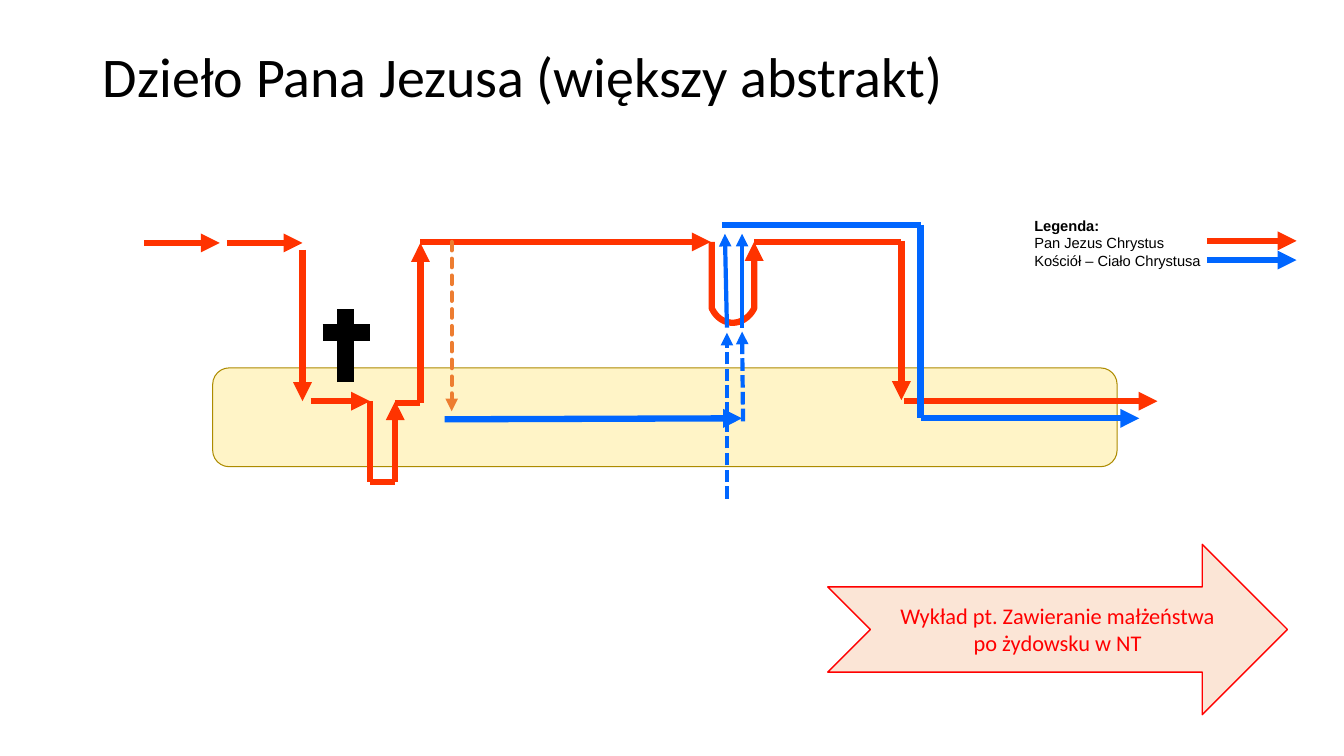
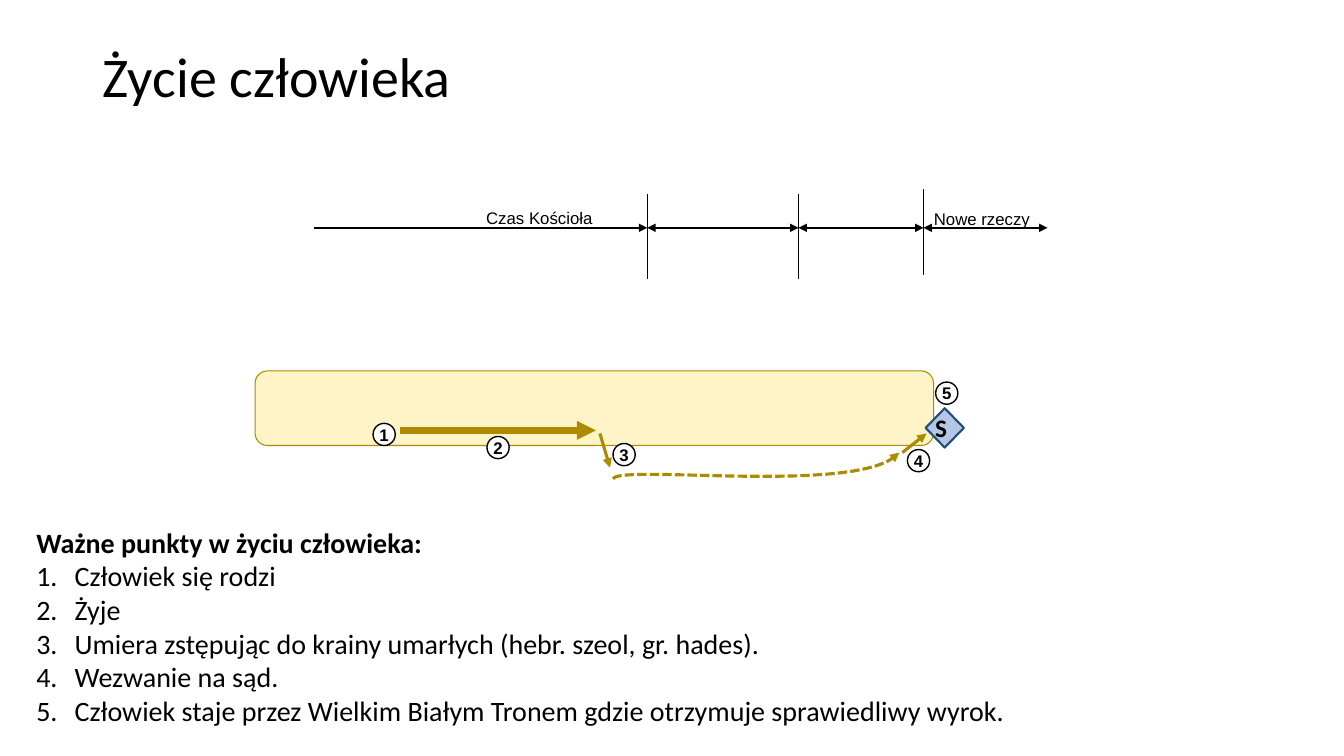
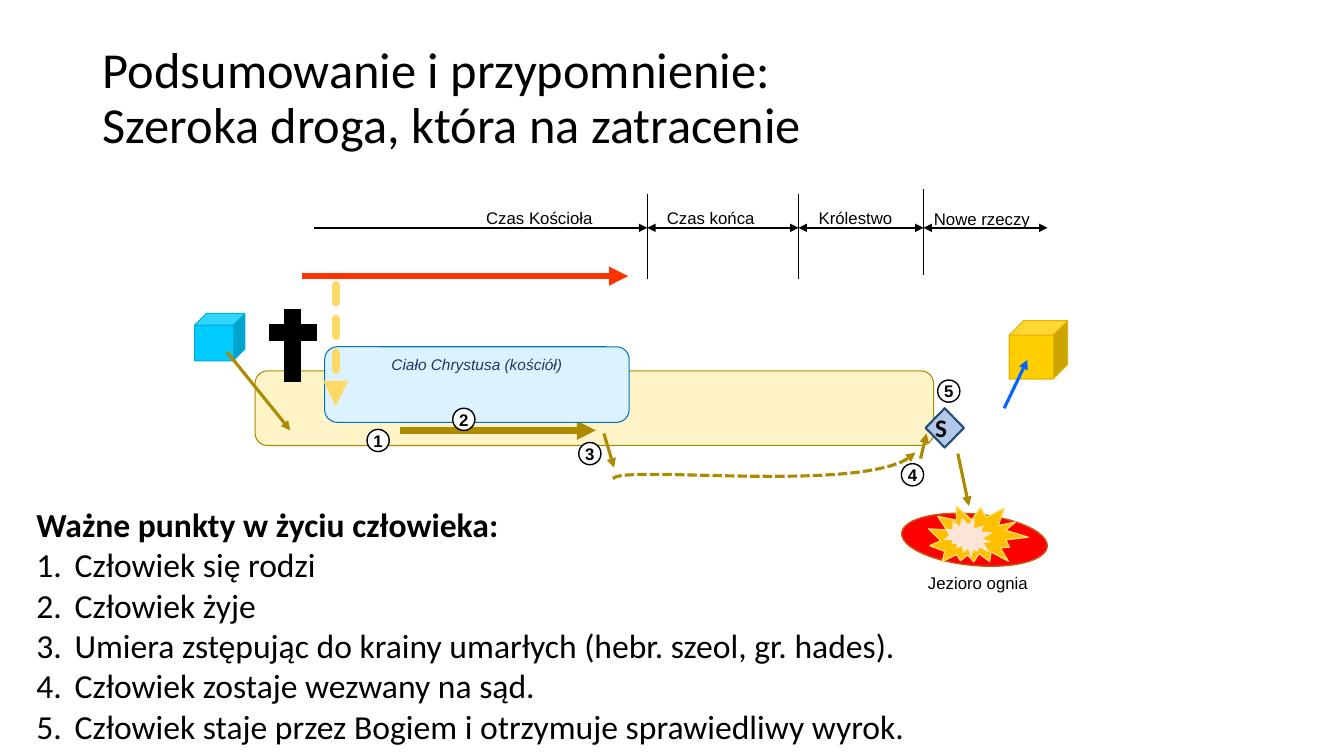
from lxml.etree import SubElement
from pptx import Presentation
from pptx.dml.color import RGBColor
from pptx.enum.dml import MSO_LINE
from pptx.enum.shapes import MSO_CONNECTOR, MSO_SHAPE
from pptx.enum.text import MSO_ANCHOR, MSO_AUTO_SIZE, PP_ALIGN
from pptx.oxml.ns import qn
from pptx.util import Inches, Pt

# Shared colours and fonts
RED, BLUE, BLACK, WHITE = "FF3300", "0066FF", "000000", "FFFFFF"
GOLD, CREAM, ORANGE, YELLOW = "AD8B00", "FFF4C7", "ED7D31", "FFD966"
SANS, BODY = "Arial", "Calibri"
LEFT, CENTER = PP_ALIGN.LEFT, PP_ALIGN.CENTER
TOP, MIDDLE = MSO_ANCHOR.TOP, MSO_ANCHOR.MIDDLE


# Formatting helpers
def tint(fill, color):
    fill.solid()
    fill.fore_color.rgb = RGBColor.from_string(color)


def write(frame, text, size, font=BODY, color=BLACK, bold=False, italic=False,
          align=LEFT, anchor=TOP, wrap=True, inset=None):
    frame.text = text
    frame.word_wrap = wrap
    frame.auto_size = MSO_AUTO_SIZE.NONE
    frame.vertical_anchor = anchor
    if inset is not None:
        frame.margin_left = frame.margin_right = Inches(inset)
        frame.margin_top = frame.margin_bottom = Inches(inset)
    for para in frame.paragraphs:
        para.alignment = align
        para.space_before = Pt(0)
        for run in para.runs:
            run.font.size = Pt(size)
            run.font.name = font
            run.font.bold = bold
            run.font.italic = italic
            tint(run.font.fill, color)


def place(item, left, top, width, height):
    item.left, item.top = Inches(left), Inches(top)
    item.width, item.height = Inches(width), Inches(height)


def stroke(line, color, width, ends="", dash=False, cap=None):
    """Style a line; ends holds "h" for a head arrow and "t" for a tail arrow."""
    tint(line.fill, color)
    line.width = Pt(width)
    if dash:
        line.dash_style = MSO_LINE.SQUARE_DOT
    node = line.fill._xPr
    if cap:
        node.set("cap", cap)
    for key, tag in (("h", "a:headEnd"), ("t", "a:tailEnd")):
        if key in ends:
            SubElement(node, qn(tag)).set("type", "triangle")


# Drawing helpers
def draw(slide, start, end, color, width=4.5, ends="t", dash=False, cap=None):
    x1, y1, x2, y2 = (Inches(v) for v in (*start, *end))
    link = slide.shapes.add_connector(MSO_CONNECTOR.STRAIGHT, x1, y1, x2, y2)
    stroke(link.line, color, width, ends, dash, cap)
    SubElement(link._element.spPr, qn("a:effectLst"))


def shape(slide, kind, box, fill, line=None, width=0.75, turn=0):
    item = slide.shapes.add_shape(kind, *(Inches(v) for v in box))
    item.shadow.inherit = False
    item.rotation = turn
    tint(item.fill, fill)
    if line:
        stroke(item.line, line, width)
    else:
        item.line.fill.background()
    return item


def curve(p0, p1, p2, p3, steps=24):
    """Points along a cubic curve."""
    points = []
    for step in range(steps + 1):
        t = step / steps
        u = 1 - t
        points.append(tuple(u**3 * a + 3 * u * u * t * b + 3 * u * t * t * c + t**3 * d
                            for a, b, c, d in zip(p0, p1, p2, p3)))
    return points


def trace(slide, points, color, width, dash=False):
    spots = [(Inches(x), Inches(y)) for x, y in points]
    pen = slide.shapes.build_freeform(*spots[0])
    pen.add_line_segments(spots[1:], close=False)
    item = pen.convert_to_shape()
    item.shadow.inherit = False
    item.fill.background()
    stroke(item.line, color, width, "t", dash)


def label(slide, text, left, top, width):
    box = slide.shapes.add_textbox(*(Inches(v) for v in (left, top, width, 0.26)))
    write(box.text_frame, text, 12, SANS, align=CENTER, anchor=MIDDLE, inset=0.03)


def cross(slide, x):
    draw(slide, (x - 0.23, 3.3), (x + 0.24, 3.3), BLACK, 12, "")
    draw(slide, (x, 3.79), (x, 3.07), BLACK, 12, "")


def badges(slide, spots):
    for count, (left, top) in enumerate(spots, 1):
        disc = shape(slide, MSO_SHAPE.OVAL, (left, top, 0.22, 0.22), WHITE, BLACK, 1)
        write(disc.text_frame, str(count), 12, SANS, bold=True,
              align=CENTER, anchor=MIDDLE, wrap=False)


# Slide parts
def page(deck, layout, title, size=40, height=0.78):
    slide = deck.slides.add_slide(deck.slide_layouts[layout])
    place(slide.shapes.title, 0.92, 0.4, 11.5, height)
    write(slide.shapes.title.text_frame, title, size, anchor=MIDDLE)
    slide.shapes.title.text_frame.paragraphs[0].line_spacing = 0.9
    return slide


def band(slide, box):
    shape(slide, MSO_SHAPE.ROUNDED_RECTANGLE, box, CREAM, GOLD)


def points(slide, items, size, top, height):
    body = slide.placeholders[1]
    place(body, 0.26, top, 13.05, height)
    write(body.text_frame, "\n".join(["Ważne punkty w życiu człowieka:", *items]), size)
    head, *rest = body.text_frame.paragraphs
    head.runs[0].font.bold = True
    for para in (head, *rest):
        props = para._p.get_or_add_pPr()
        hang = 0 if para is head else Inches(0.38)
        props.set("marL", str(hang))
        props.set("indent", str(-hang))
        if para is head:
            SubElement(props, qn("a:buNone"))
        else:
            SubElement(props, qn("a:buFont")).set("typeface", "+mj-lt")
            SubElement(props, qn("a:buAutoNum")).set("type", "arabicPeriod")


def axis(slide):
    marks = [3.11, 6.42, 7.92, 9.16, 10.39]
    for left, right in zip(marks, marks[1:]):
        ends = "t" if left == marks[0] else "ht"
        draw(slide, (left, 2.26), (right, 2.26), BLACK, 1.5, ends)
    for x, top in zip(marks[1:4], (1.92, 1.92, 1.88)):
        draw(slide, (x, top), (x, top + 0.85), BLACK, 0.5, "")
    label(slide, "Czas Kościoła", 4.63, 2.03, 1.44)
    label(slide, "Nowe rzeczy", 9.16, 2.04, 1.16)


def life(slide, fall, bend, end, rise):
    """Road of a life: the band, the way down, the wait and the judgement."""
    band(slide, (2.53, 3.68, 6.73, 0.74))
    draw(slide, (3.97, 4.27), (5.91, 4.27), GOLD)
    axis(slide)
    trace(slide, curve((6.08, 4.75), (6.15, 4.6), (bend, 4.92), (end, 4.49)),
          GOLD, 2.25, True)
    draw(slide, rise, (9.19, 4.3), GOLD, 2.25)
    draw(slide, (fall, 4.3), (fall + 0.1, 4.64), GOLD, 2.25)
    judge = shape(slide, MSO_SHAPE.DIAMOND, (9.18, 4.05, 0.38, 0.39),
                  "B4C7E7", "1F4E79", 1.5)
    write(judge.text_frame, "S", 18, bold=True, anchor=MIDDLE, inset=0)


# Slides
def work(deck):
    slide = page(deck, 5, "Dzieło Pana Jezusa (większy abstrakt)")
    band(slide, (2.11, 3.65, 8.97, 0.98))

    # Path of Christ
    draw(slide, (4.17, 2.4), (7.05, 2.4), RED)
    trace(slide, [(7.06, 2.4), *curve((7.06, 3.06), (7.15, 3.25), (7.38, 3.25), (7.48, 3.06)),
                  (7.48, 2.4)], RED, 4.5)
    for start, end in (
        ((1.43, 2.41), (2.18, 2.41)), ((2.25, 2.41), (3, 2.41)),
        ((3, 2.48), (3, 3.98)), ((3.08, 3.98), (3.67, 3.98)),
        ((3.92, 4.78), (3.92, 3.98)), ((4.17, 4), (4.17, 2.41)),
        ((8.94, 2.39), (8.94, 3.97)), ((8.97, 3.98), (11.48, 3.98)),
    ):
        draw(slide, start, end, RED)
    for start, end in (
        ((3.67, 3.98), (3.67, 4.78)), ((3.67, 4.78), (3.92, 4.78)),
        ((3.92, 4), (4.17, 4)), ((7.48, 2.4), (8.94, 2.4)),
    ):
        draw(slide, start, end, RED, ends="")

    # Path of the church
    draw(slide, (7.16, 2.23), (9.13, 2.23), BLUE, ends="")
    draw(slide, (9.13, 2.23), (9.13, 4.15), BLUE, ends="")
    draw(slide, (9.13, 4.15), (11.3, 4.15), BLUE)
    draw(slide, (4.41, 4.16), (7.36, 4.15), BLUE)
    for start, end, dash in (
        ((7.36, 3.25), (7.36, 2.32), False), ((7.21, 3.25), (7.19, 2.32), False),
        ((7.37, 4.18), (7.36, 3.29), True), ((7.21, 4.95), (7.21, 3.3), True),
    ):
        draw(slide, start, end, BLUE, 3, dash=dash)
    draw(slide, (4.48, 2.4), (4.48, 4.08), ORANGE, 3, dash=True, cap="rnd")
    cross(slide, 3.43)

    # Legend
    box = slide.shapes.add_textbox(*(Inches(v) for v in (10.16, 2.1, 1.99, 0.63)))
    write(box.text_frame, "Legenda:\nPan Jezus Chrystus\nKościół – Ciało Chrystusa", 10.5, SANS)
    box.text_frame.paragraphs[0].runs[0].font.bold = True
    for y, color in ((2.39, RED), (2.58, BLUE)):
        draw(slide, (11.97, y), (12.86, y), color)

    # Pointer to the lecture
    sign = shape(slide, MSO_SHAPE.NOTCHED_RIGHT_ARROW, (8.21, 5.4, 4.56, 1.69),
                 "FBE5D6", "FF0000", 1)
    write(sign.text_frame, "Wykład pt. Zawieranie małżeństwa\vpo żydowsku w NT", 16,
          color="FF0000", align=CENTER, anchor=MIDDLE)


def human(deck):
    slide = page(deck, 1, "Życie człowieka")
    life(slide, 5.95, 8.57, 8.92, (8.95, 4.49))
    badges(slide, [(3.7, 4.2), (4.83, 4.33), (6.08, 4.4), (9, 4.46), (9.28, 3.79)])
    points(slide, [
        "Człowiek się rodzi",
        "Żyje",
        "Umiera zstępując do krainy umarłych (hebr. szeol, gr. hades).",
        "Wezwanie na sąd.",
        "Człowiek staje przez Wielkim Białym Tronem gdzie otrzymuje sprawiedliwy wyrok.",
    ], 20, 5.16, 2.12)


def recap(deck):
    slide = page(deck, 1, "Podsumowanie i przypomnienie:\vSzeroka droga, która na zatracenie",
                 36, 1.18)
    life(slide, 5.99, 8.7, 9.08, (9.13, 4.55))
    label(slide, "Czas końca", 6.48, 2.03, 1.14)
    label(slide, "Królestwo", 8.02, 2.03, 0.93)

    # Old and new creation
    shape(slide, MSO_SHAPE.CUBE, (10.01, 3.18, 0.58, 0.58), "FFCE00", "E0B400")
    draw(slide, (9.96, 4.05), (10.19, 3.57), BLUE, 2.25)
    shape(slide, MSO_SHAPE.CUBE, (1.93, 3.11, 0.5, 0.47), "00CCFF", "00AED8")
    draw(slide, (2.25, 3.49), (2.88, 4.27), GOLD, 2.25)

    # Lake of fire
    draw(slide, (9.5, 4.5), (9.61, 5.02), GOLD, 2.25)
    shape(slide, MSO_SHAPE.FLOWCHART_CONNECTOR, (8.94, 5.1, 1.45, 0.51),
          "FF0000", "C55A11", 1, 5.4)
    shape(slide, MSO_SHAPE.EXPLOSION2, (9.21, 4.98, 0.97, 0.68), "FFC000", YELLOW, 1, 16.2)
    shape(slide, MSO_SHAPE.EXPLOSION2, (9.38, 5.11, 0.47, 0.45), "FBE5D6", turn=56.2)
    label(slide, "Jezioro ognia", 8.98, 5.65, 1.44)

    # Church
    church = shape(slide, MSO_SHAPE.ROUNDED_RECTANGLE, (3.22, 3.44, 3.02, 0.75),
                   "DDF2FF", "0070C0")
    write(church.text_frame, "Ciało Chrystusa (kościół)", 11, SANS, "203864",
          italic=True, align=CENTER, wrap=False)
    draw(slide, (3, 2.74), (6.23, 2.74), RED)
    draw(slide, (3.33, 2.83), (3.33, 4.03), YELLOW, 6, dash=True, cap="rnd")
    cross(slide, 2.9)

    badges(slide, [(3.64, 4.26), (4.49, 4.05), (5.74, 4.39), (8.94, 4.6), (9.3, 3.77)])
    points(slide, [
        "Człowiek się rodzi",
        "Człowiek żyje",
        "Umiera zstępując do krainy umarłych (hebr. szeol, gr. hades).",
        "Człowiek zostaje wezwany na sąd.",
        "Człowiek staje przez Bogiem i otrzymuje sprawiedliwy wyrok.",
    ], 24, 4.95, 2.52)


def main():
    deck = Presentation()
    deck.slide_width, deck.slide_height = Inches(13.33), Inches(7.5)
    work(deck)
    human(deck)
    recap(deck)
    deck.save("out.pptx")


if __name__ == "__main__":
    main()
